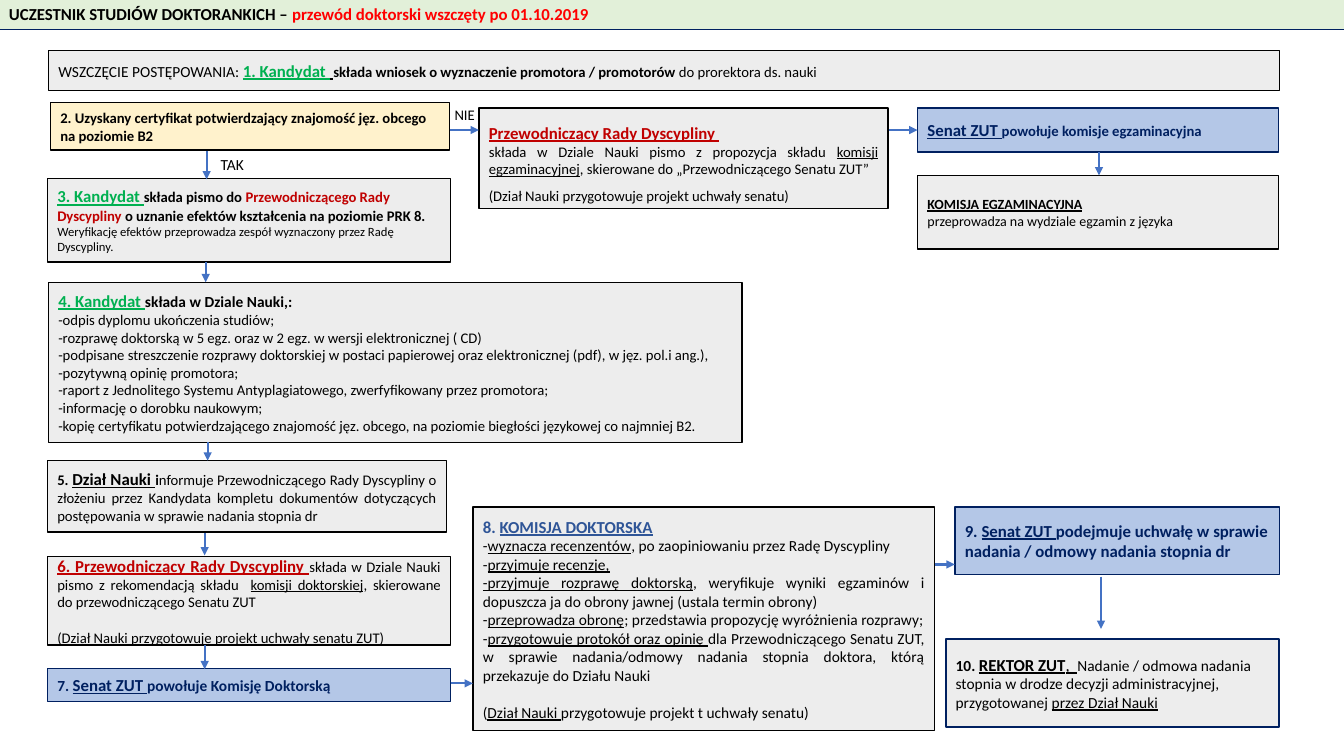
"""Builds the flow chart of the doctoral procedure as one slide."""
import dataclasses

import lxml.etree
import pptx
import pptx.dml.color
import pptx.enum.shapes
import pptx.enum.text
import pptx.oxml.ns
import pptx.util

INK = {
    "black": "000000", "navy": "002060", "green": "00B050", "wine": "C00000",
    "red": "FF0000", "blue": "2F5597", "grey": "EDEDED", "cream": "FFF2CC",
    "sky": "B4C7E7", "mint": "E2F0D9", "arrow": "4472C4",
}
ANCHOR = pptx.enum.text.MSO_ANCHOR
ALIGN = pptx.enum.text.PP_ALIGN


@dataclasses.dataclass
class Flow:
    slide: object
    font: str = "Calibri"
    size: float = 10.5

    def tint(self, name):
        return pptx.dml.color.RGBColor.from_string(INK[name])

    def letter(self, frame, paras, just=False, lead=None, gap=None):
        for row, runs in enumerate(paras):
            para = frame.add_paragraph() if row else frame.paragraphs[0]
            para.alignment = ALIGN.JUSTIFY if just else ALIGN.LEFT
            if row in (lead or ()):
                para.line_spacing = 1.5
            if row in (gap or {}):
                para.space_before = pptx.util.Pt(gap[row])
            for text, *look in runs:
                size, style, ink = look + [self.size, "", "black"][len(look):]
                run = para.add_run()
                run.text = text
                run.font.name = self.font
                run.font.size = pptx.util.Pt(size)
                run.font.bold = "b" in style
                run.font.underline = "u" in style
                run.font.color.rgb = self.tint(ink)

    def box(self, at, paras, fill="grey", edge="black", width=1,
            anchor=ANCHOR.MIDDLE, **style):
        shape = self.slide.shapes.add_shape(
            pptx.enum.shapes.MSO_SHAPE.RECTANGLE, *map(pptx.util.Inches, at))
        shape.shadow.inherit = False
        shape.fill.solid()
        shape.fill.fore_color.rgb = self.tint(fill)
        shape.line.color.rgb = self.tint(edge)
        shape.line.width = pptx.util.Pt(width)
        shape.text_frame.word_wrap = True
        shape.text_frame.vertical_anchor = anchor
        self.letter(shape.text_frame, paras, **style)

    def label(self, at, text, size):
        shape = self.slide.shapes.add_textbox(*map(pptx.util.Inches, at))
        shape.text_frame.word_wrap = True
        self.letter(shape.text_frame, [[(text, size)]])

    def arrow(self, *ends):
        line = self.slide.shapes.add_connector(
            pptx.enum.shapes.MSO_CONNECTOR.STRAIGHT,
            *map(pptx.util.Inches, ends))
        line.line.color.rgb = self.tint("arrow")
        line.line.width = pptx.util.Pt(1.5)
        qn = pptx.oxml.ns.qn
        form = line.element.spPr
        lxml.etree.SubElement(form.find(qn("a:ln")), qn("a:tailEnd"),
                              type="triangle")
        lxml.etree.SubElement(form, qn("a:effectLst"))


def main():
    deck = pptx.Presentation()
    deck.slide_width = pptx.util.Inches(13.33)
    deck.slide_height = pptx.util.Inches(7.5)
    flow = Flow(deck.slides.add_slide(deck.slide_layouts[6]))

    flow.box((0.48, 0.5, 12.21, 0.4), [[
        ("WSZCZĘCIE POSTĘPOWANIA: ", 11),
        ("1. Kandydat ", 12, "bu", "green"), (" ", 12, "bu"),
        ("składa wniosek o wyznaczenie promotora / promotorów ", 10.5, "b"),
        ("do prorektora ds. nauki",)]])
    flow.box((0.5, 1.02, 3.96, 0.47), [[
        ("2. Uzyskany certyfikat potwierdzający znajomość jęz. obcego "
         "na poziomie B2", 10.5, "b")]], fill="cream")
    flow.label((2.09, 1.49, 0.5, 0.29), "TAK", 11)
    flow.label((4.41, 1, 0.44, 0.28), "NIE", 10.5)
    flow.box((4.75, 1.07, 4.06, 1), [
        [("Przewodniczący Rady Dyscypliny ", 12, "bu", "wine")],
        [("składa w Dziale Nauki pismo z propozycja składu ",),
         ("komisji egzaminacyjnej", 10.5, "u"),
         (", skierowane do „Przewodniczącego Senatu ZUT” ",)],
        [("(Dział Nauki przygotowuje projekt uchwały senatu)",)],
    ], just=True, lead=(0, 2))
    flow.box((9.1, 1.07, 3.58, 0.44), [[
        ("Senat ZUT ", 12, "bu", "navy"),
        ("powołuje komisje egzaminacyjna", 10.5, "b", "navy")]],
        fill="sky", edge="navy")
    flow.box((9.1, 1.74, 3.58, 0.73), [
        [("KOMISJA EGZAMINACYJNA", 10, "bu")],
        [("przeprowadza na wydziale egzamin z języka", 10)]])
    flow.box((0.47, 1.77, 4, 0.83), [
        [("3. Kandydat ", 12, "bu", "green"),
         ("składa pismo do ", 10.5, "b"),
         ("Przewodniczącego Rady Dyscypliny", 10.5, "b", "wine"),
         (" o uznanie efektów kształcenia na poziomie PRK 8.", 10.5, "b")],
        [("Weryfikację efektów przeprowadza zespół wyznaczony przez Radę "
          "Dyscypliny.", 9)]])
    papers = [
        "-odpis dyplomu ukończenia studiów;",
        "-rozprawę doktorską w 5 egz. oraz w 2 egz. w wersji "
        "elektronicznej ( CD)",
        "-podpisane streszczenie rozprawy doktorskiej w postaci papierowej "
        "oraz elektronicznej (pdf), w jęz. pol.i ang.), ",
        "-pozytywną opinię promotora;",
        "-raport z Jednolitego Systemu Antyplagiatowego, zwerfyfikowany "
        "przez promotora;",
        "-informację o dorobku naukowym;",
        "-kopię certyfikatu potwierdzającego znajomość jęz. obcego, na "
        "poziomie biegłości językowej co najmniej B2.",
    ]
    flow.box((0.48, 2.8, 6.88, 1.59), [
        [("4. Kandydat ", 12, "bu", "green"),
         ("składa w Dziale Nauki,:", 11, "b")],
        *([(text,)] for text in papers)], just=True)
    flow.box((0.47, 5.52, 4, 0.88), [
        [("6. Przewodniczący Rady Dyscypliny ", 12, "bu", "wine"),
         ("składa w Dziale Nauki pismo z rekomendacją składu  ",),
         ("komisji doktorskiej", 10.5, "u"),
         (", skierowane do przewodniczącego Senatu ZUT ",)],
        [("(",), ("Dział Nauki ", 10.5, "u"),
         ("przygotowuje projekt uchwały senatu ZUT)",)],
    ], just=True, gap={1: 12.8})
    flow.box((0.47, 6.63, 4, 0.33), [[
        ("7. ", 11, "b", "navy"), ("Senat ZUT ", 12, "bu", "navy"),
        ("powołuje Komisję Doktorską", 11, "b", "navy")]],
        fill="sky", edge="navy")
    flow.box((0.47, 4.57, 3.96, 0.71), [[
        ("5. ", 10.5, "b"), ("Dział Nauki ", 12, "bu"), ("i", 10.5, "b"),
        ("nformuje Przewodniczącego Rady Dyscypliny o złożeniu przez "
         "Kandydata kompletu dokumentów dotyczących postępowania w sprawie "
         "nadania stopnia dr",)]], just=True)
    flow.box((4.69, 5.03, 4.58, 2.22), [
        [("8. ", 12, "b", "blue"), ("KOMISJA DOKTORSKA", 12, "bu", "blue")],
        [("-", 11), ("wyznacza recenzentów", 11, "u"),
         (", po zaopiniowaniu przez Radę Dyscypliny ", 11)],
        [("-", 11), ("przyjmuje recenzje,", 11, "u")],
        [("-przyjmuje rozprawę doktorską", 11, "u"),
         (", weryfikuje wyniki egzaminów i dopuszcza ja do obrony jawnej "
          "(ustala termin obrony)", 11)],
        [("-", 11), ("przeprowadza obronę", 11, "u"),
         ("; przedstawia propozycję wyróżnienia rozprawy;", 11)],
        [("-", 11), ("przygotowuje protokół oraz opinię ", 11, "u"),
         ("dla Przewodniczącego Senatu ZUT, w sprawie nadania/odmowy nadania "
          "stopnia doktora, którą przekazuje do Działu Nauki ", 11)],
        [("(", 11), ("Dział Nauki ", 11, "u"),
         ("przygotowuje projekt t uchwały senatu)", 11)],
    ], just=True, gap={6: 13.4})
    flow.box((9.47, 5.03, 3.22, 0.67), [[
        ("9. ", 12, "b", "navy"), ("Senat ZUT ", 12, "bu", "navy"),
        ("podejmuje uchwałę w sprawie nadania / odmowy nadania stopnia dr",
         12, "b", "navy")]], fill="sky", edge="navy")
    flow.box((9.38, 6.34, 3.31, 0.87), [[
        ("10. ", 11, "b"), ("REKTOR ZUT", 12, "bu"), (",  ", 12, "u"),
        ("Nadanie / odmowa nadania stopnia w drodze decyzji "
         "administracyjnej, przygotowanej ", 11),
        ("przez Dział Nauki", 11, "u")]], edge="navy", width=1.5)
    flow.box((-0.01, -0.01, 13.35, 0.3), [[
        ("UCZESTNIK STUDIÓW DOKTORANKICH – ", 12, "b"),
        ("przewód doktorski wszczęty po 01.10.2019", 12, "b", "red")]],
        fill="mint", edge="navy", width=0.75, anchor=ANCHOR.TOP)

    for x, top, foot in [
            (2.05, 1.5, 1.78), (2.04, 2.6, 2.8), (2.06, 4.39, 4.57),
            (2.03, 5.29, 5.51), (2.03, 6.4, 6.64), (10.9, 1.51, 1.74),
            (10.92, 5.72, 6.24)]:
        flow.arrow(x, top, x, foot)
    for y, left, right in [(1.29, 4.46, 4.75), (1.29, 8.82, 9.1),
                           (6.78, 4.47, 4.69), (5.6, 9.27, 9.47)]:
        flow.arrow(left, y, right, y)
    deck.save("out.pptx")


if __name__ == "__main__":
    main()
